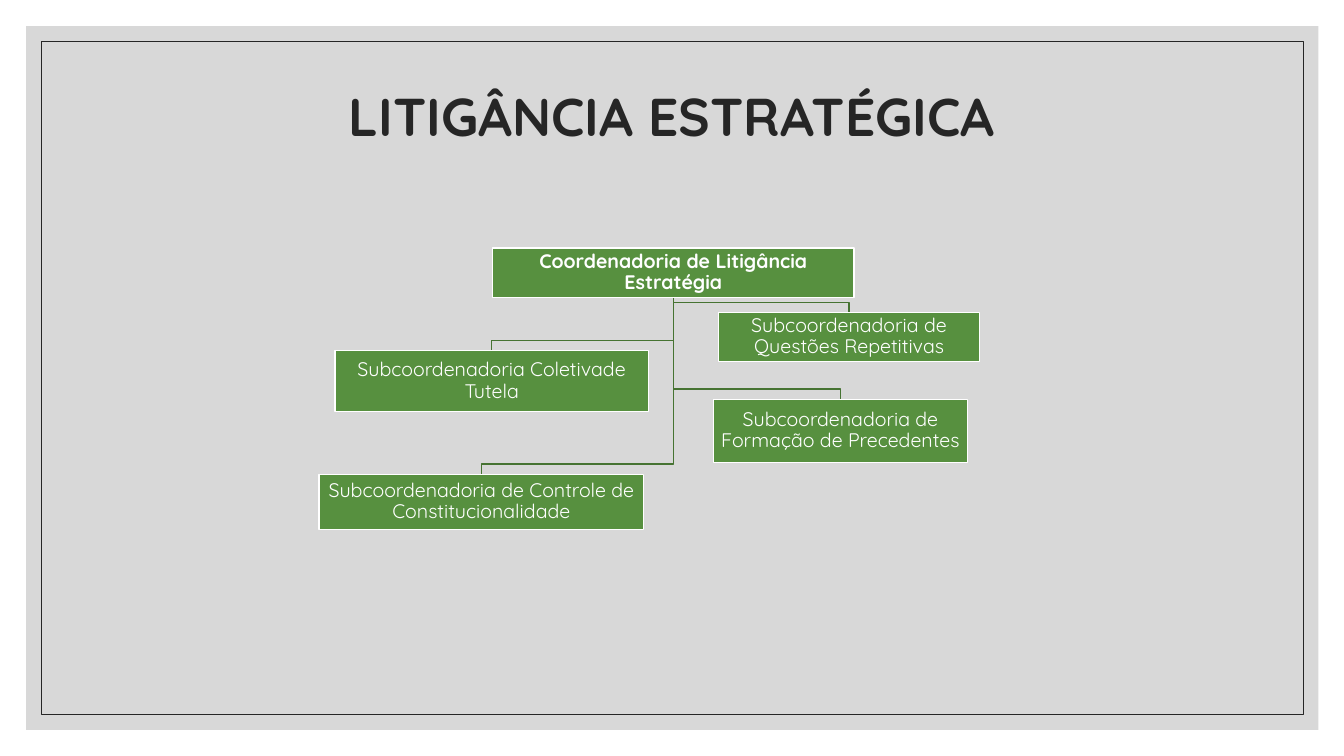
from dataclasses import dataclass

from lxml.etree import SubElement
from pptx import Presentation
from pptx.dml.color import RGBColor as RGB
from pptx.enum.shapes import MSO_SHAPE as Shape
from pptx.enum.text import MSO_ANCHOR as Anchor, MSO_AUTO_SIZE as AutoSize, PP_ALIGN as Align
from pptx.oxml.ns import qn
from pptx.util import Pt


@dataclass(frozen=True)
class Theme:
    font: str = "Quicksand"
    dark: RGB = RGB.from_string("262626")
    panel: RGB = RGB.from_string("BFBFBF")
    box: RGB = RGB.from_string("57903F")
    branch: RGB = RGB.from_string("467332")
    white: RGB = RGB.from_string("FFFFFF")
    title_size: int = 38
    box_size: int = 14


theme = Theme()
presentation = Presentation()
presentation.slide_width, presentation.slide_height = Pt(960), Pt(540)
slide = presentation.slides.add_slide(presentation.slide_layouts[5])
title = slide.shapes.title


def add_rectangle(left, top, width, height):
    shape = slide.shapes.add_shape(Shape.RECTANGLE, Pt(left), Pt(top), Pt(width), Pt(height))
    shape.shadow.inherit = False
    return shape


def write_text(shape, text, size, color, bold):
    frame = shape.text_frame
    frame.text = text
    frame.word_wrap = True
    frame.auto_size = AutoSize.NONE
    frame.vertical_anchor = Anchor.MIDDLE
    paragraph = frame.paragraphs[0]
    paragraph.alignment = Align.CENTER
    paragraph.line_spacing = 0.9
    font = paragraph.runs[0].font
    font.name, font.size, font.bold = theme.font, Pt(size), bold
    font.color.rgb = color


# Translucent panel and thin frame, both behind the title
panel = add_rectangle(18.7, 18.7, 923, 502.6)
panel.fill.solid()
panel.fill.fore_color.rgb = theme.panel
panel.line.fill.background()
panel_color = panel.fill._xPr.find(qn("a:solidFill"))[0]
SubElement(panel_color, qn("a:alpha")).set("val", "60000")

frame_border = add_rectangle(29.5, 29.5, 901.4, 481)
frame_border.fill.background()
frame_border.line.color.rgb = theme.dark
frame_border.line.width = Pt(0.5)

for backdrop in (panel, frame_border):
    title._element.addprevious(backdrop._element)

# Title
title.left, title.top, title.width, title.height = Pt(84), Pt(50.4), Pt(792), Pt(69)
write_text(title, "LITIGÂNCIA ESTRATÉGICA", theme.title_size, theme.dark, True)

# Organisation chart: text, left, top, width, height
root = ("Coordenadoria de Litigância Estratégia", 352, 177.3, 258, 35.1)
units = [
    ("Subcoordenadoria Coletivade Tutela", 239.3, 250.4, 224, 43.7),
    ("Subcoordenadoria de Questões Repetitivas", 513.3, 223.2, 186.5, 35.1),
    ("Subcoordenadoria de Formação de Precedentes", 509.6, 285.2, 181.6, 45.2),
    ("Subcoordenadoria de Controle de Constitucionalidade", 228, 338.7, 231.9, 39.6),
]

# Branches: down the trunk, across, then a short drop into each unit
drop = 7.3
trunk_x, trunk_y = root[1] + root[3] / 2, root[2] + root[4]
for _, left, top, width, _ in units:
    center, bend = left + width / 2, top - drop
    builder = slide.shapes.build_freeform(Pt(trunk_x), Pt(trunk_y))
    corners = [(trunk_x, bend), (center, bend), (center, top)]
    builder.add_line_segments([(Pt(x), Pt(y)) for x, y in corners], close=False)
    branch = builder.convert_to_shape()
    branch.shadow.inherit = False
    branch.fill.background()
    branch.line.color.rgb = theme.branch
    branch.line.width = Pt(1)

# Boxes
for unit in [root, *units]:
    text, *bounds = unit
    box = add_rectangle(*bounds)
    box.fill.solid()
    box.fill.fore_color.rgb = theme.box
    box.line.color.rgb = theme.white
    box.line.width = Pt(1)
    write_text(box, text, theme.box_size, theme.white, unit is root)
    frame = box.text_frame
    frame.margin_left = frame.margin_right = frame.margin_top = frame.margin_bottom = Pt(0.7)

presentation.save("out.pptx")
